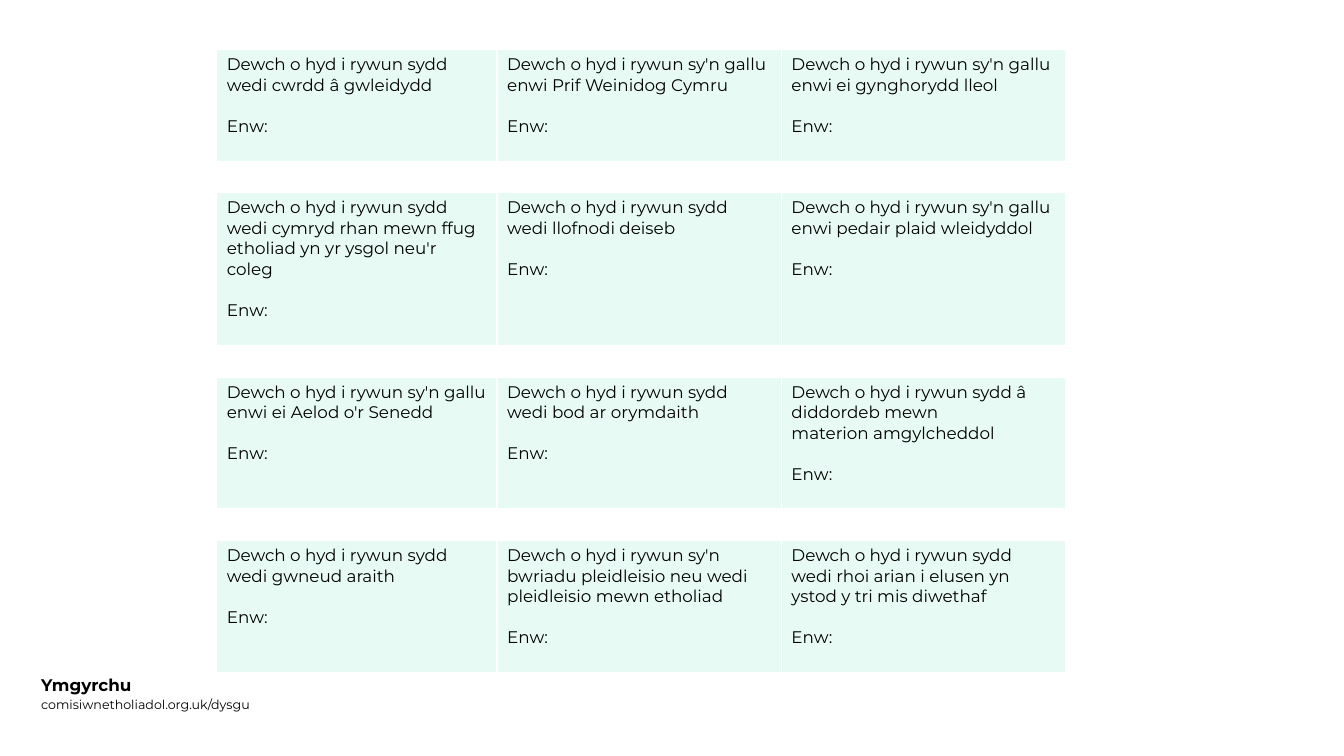
from lxml import etree
from pptx import Presentation
from pptx.dml.color import RGBColor
from pptx.enum.text import MSO_ANCHOR
from pptx.oxml.ns import qn
from pptx.util import Inches, Pt

MIDDLE = MSO_ANCHOR.MIDDLE
FONT = "Montserrat"
BLACK, WHITE, MINT = "000000", "FFFFFF", "E7FAF4"
COLS = [2.78, 2.82, 2.82]
HEIGHTS = [1.11, 1.52, 1.31, 1.31]
GAP = 0.31
TASKS = [
    ["Dewch o hyd i rywun sydd wedi cwrdd â gwleidydd",
     "Dewch o hyd i rywun sy'n gallu enwi Prif Weinidog Cymru",
     "Dewch o hyd i rywun sy'n gallu enwi ei gynghorydd lleol"],
    ["Dewch o hyd i rywun sydd wedi cymryd rhan mewn ffug etholiad "
     "yn yr ysgol neu'r coleg",
     "Dewch o hyd i rywun sydd wedi llofnodi deiseb",
     "Dewch o hyd i rywun sy'n gallu enwi pedair plaid wleidyddol"],
    ["Dewch o hyd i rywun sy'n gallu enwi ei Aelod o'r Senedd",
     "Dewch o hyd i rywun sydd wedi bod ar orymdaith",
     "Dewch o hyd i rywun sydd â diddordeb mewn\nmaterion amgylcheddol"],
    ["Dewch o hyd i rywun sydd wedi gwneud araith",
     "Dewch o hyd i rywun sy'n bwriadu pleidleisio neu wedi "
     "pleidleisio mewn etholiad",
     "Dewch o hyd i rywun sydd wedi rhoi arian i elusen yn ystod "
     "y tri mis diwethaf"],
]


def color(code):
    """Turn a hex string into a colour."""
    return RGBColor.from_string(code)


def style(frame, size, bold=False):
    """Format every run in a text frame."""
    for para in frame.paragraphs:
        for run in para.runs:
            font = run.font
            font.name, font.size, font.bold = FONT, Pt(size), bold
            font.color.rgb = color(BLACK)


def add_label(slide, top, text, size, bold=False):
    """Add one line of the footer."""
    box = slide.shapes.add_textbox(
        Inches(0.31), Inches(top), Inches(7.65), Inches(0.4))
    frame = box.text_frame
    frame.word_wrap = True
    frame.vertical_anchor = MIDDLE
    frame.text = text
    style(frame, size, bold)


def add_border(cell):
    """Give a cell thin white borders."""
    props = cell._tc.get_or_add_tcPr()
    for side in ("a:lnL", "a:lnR", "a:lnT", "a:lnB"):
        line = etree.SubElement(props, qn(side), w=str(Pt(1)))
        fill = etree.SubElement(line, qn("a:solidFill"))
        etree.SubElement(fill, qn("a:srgbClr"), val=WHITE)


def fill_card(cell, task):
    """Write a task and its name line in a mint cell."""
    cell.fill.solid()
    cell.fill.fore_color.rgb = color(MINT)
    frame = cell.text_frame
    frame.text = task + "\nEnw:"
    frame.paragraphs[-1].space_before = Pt(14.6)
    style(frame, 12)


def clear_gap(cell):
    """Leave a spacer cell bare and low."""
    cell.fill.background()
    cell.margin_top = cell.margin_bottom = 0
    cell.text_frame.paragraphs[0].font.size = Pt(8)


def add_bingo(slide):
    """Add the table of tasks with spacer rows between."""
    count = 2 * len(TASKS) - 1
    total = sum(HEIGHTS) + GAP * (len(TASKS) - 1)
    table = slide.shapes.add_table(
        count, len(COLS), Inches(2.15), Inches(0.49),
        Inches(sum(COLS)), Inches(total)).table
    table.first_row = table.horz_banding = False
    for col, width in zip(table.columns, COLS):
        col.width = Inches(width)
    for i, row in enumerate(table.rows):
        index, spacer = divmod(i, 2)
        row.height = Inches(GAP if spacer else HEIGHTS[index])
        for cell, task in zip(row.cells, TASKS[index]):
            add_border(cell)
            if spacer:
                clear_gap(cell)
            else:
                fill_card(cell, task)


def main():
    """Build the slide and save it."""
    deck = Presentation()
    deck.slide_width, deck.slide_height = Inches(13.33), Inches(7.5)
    slide = deck.slides.add_slide(deck.slide_layouts[6])
    add_label(slide, 6.79, "comisiwnetholiadol.org.uk/dysgu", 9)
    add_label(slide, 6.59, "Ymgyrchu", 12, True)
    add_bingo(slide)
    deck.save("out.pptx")


if __name__ == "__main__":
    main()
